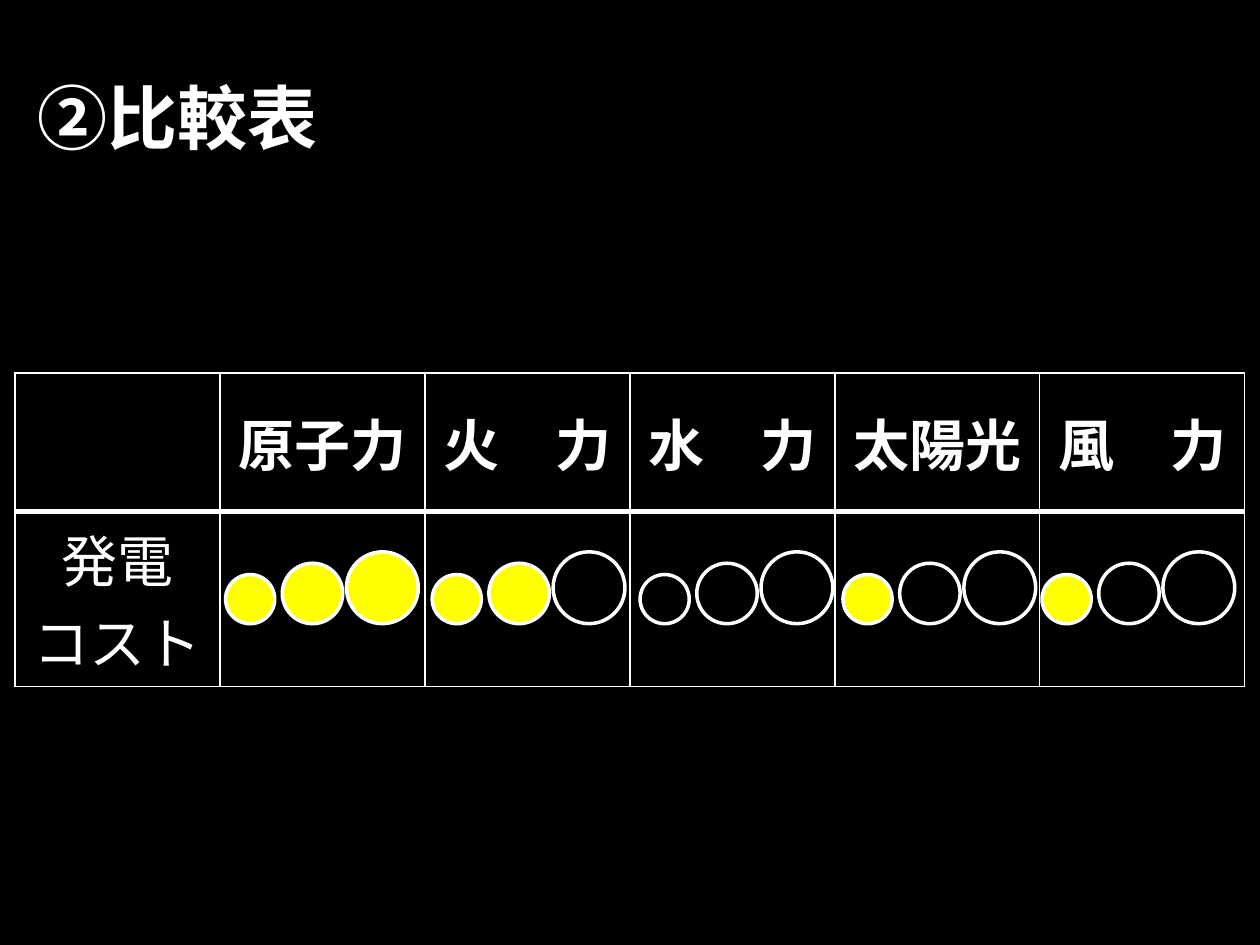
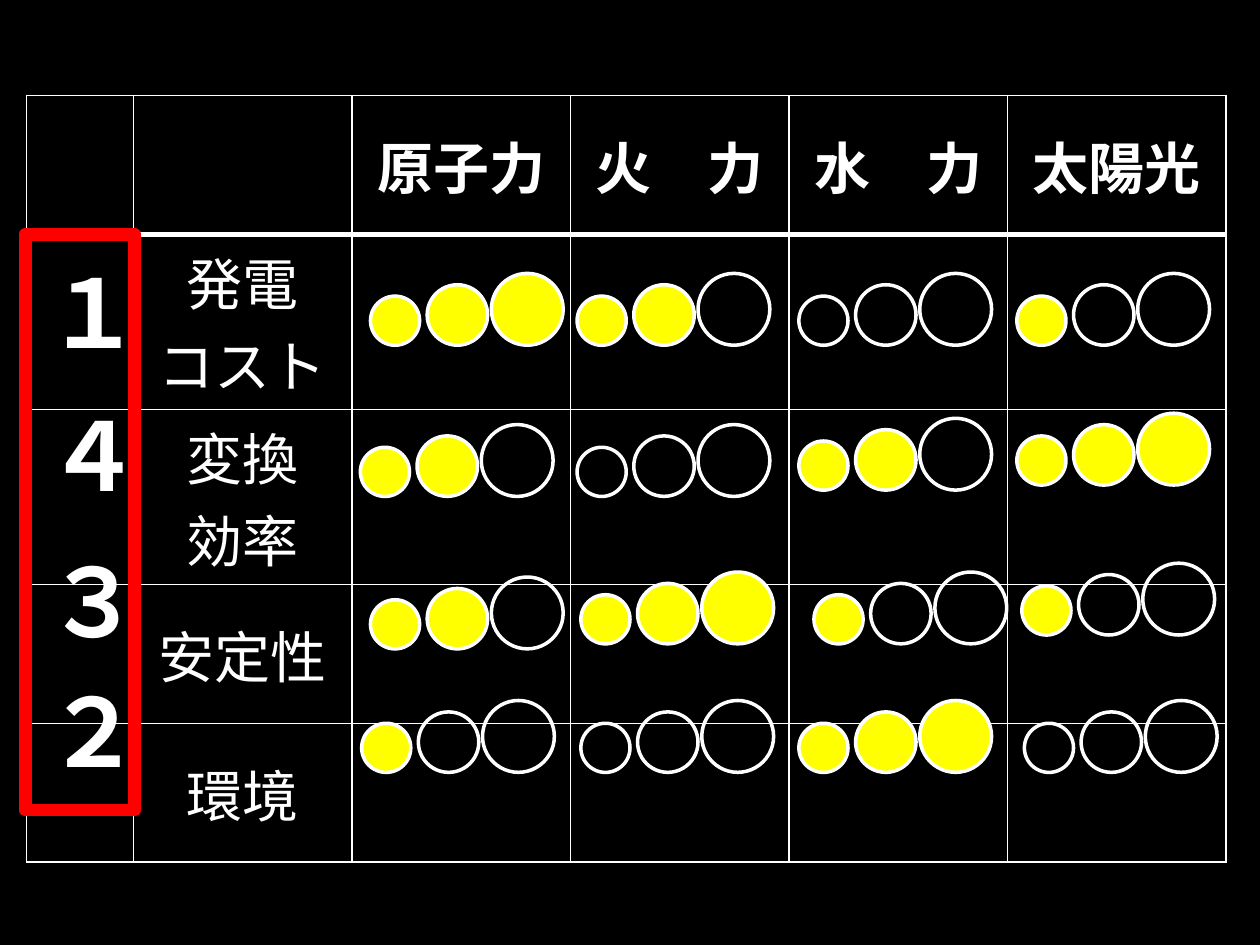
from lxml.etree import SubElement
from pptx import Presentation
from pptx.dml.color import RGBColor
from pptx.enum.shapes import MSO_SHAPE
from pptx.enum.text import MSO_ANCHOR, PP_ALIGN
from pptx.oxml.ns import qn
from pptx.util import Inches, Pt

BLACK, WHITE, YELLOW, RED = "000000", "FFFFFF", "FFFF00", "FF0000"
JAPANESE_FONT = "Noto Sans CJK JP"
DIGIT_FONT = "Calibri"
TITLE_ONLY, BLANK = 5, 6
HEADER_HEIGHT, LINE_HEIGHT = 1.1, 1.39  # one-line and two-line rows
HEADER_RULE, CELL_RULE = 3, 1

# Offset from the group's left and top, then diameter
CIRCLES = [(0, 0.18, 0.39), (0.45, 0.09, 0.48), (0.96, 0, 0.57)]

COST_ROW = ["発電\nコスト"]
SOURCES = ["原子力", "火　力", "水　力", "太陽光", "風　力"]

COST_TOP = 4.38
COST_RATINGS = [(1.79, 3), (3.43, 2), (5.08, 0), (6.69, 1), (8.27, 1)]

# Left, top and number of filled circles, one line for each criterion
RATINGS = [
    [(2.94, 2.17, 3), (4.58, 2.17, 2), (6.34, 2.17, 0), (8.07, 2.17, 1)],
    [(2.86, 3.37, 2), (4.58, 3.37, 0), (6.34, 3.32, 2), (8.07, 3.28, 3)],
    [(2.94, 4.58, 2), (4.61, 4.54, 3), (6.46, 4.54, 1), (8.11, 4.47, 1)],
    [(2.87, 5.56, 1), (4.61, 5.56, 0), (6.34, 5.56, 3), (8.13, 5.56, 0)],
]
PRIORITIES = [("１", 1.97), ("４", 3.1), ("３", 4.26), ("２", 5.29)]


def color(value):
    return RGBColor.from_string(value)


def add_page(deck, layout):
    page = deck.slides.add_slide(deck.slide_layouts[layout])
    page.background.fill.solid()
    page.background.fill.fore_color.rgb = color(BLACK)
    return page


def format_paragraph(para, size, bold, align, name=JAPANESE_FONT):
    para.alignment = align
    font = para.font
    font.size, font.bold, font.name = Pt(size), bold, name
    font.color.rgb = color(WHITE)
    if name == JAPANESE_FONT:
        SubElement(font._element, qn("a:ea"), typeface=name)


def set_title(page, text):
    title = page.shapes.title
    title.left, title.top = Inches(0.2), Inches(0.3)
    title.width, title.height = Inches(9.61), Inches(1.25)
    title.text = text
    title.text_frame.vertical_anchor = MSO_ANCHOR.MIDDLE
    format_paragraph(title.text_frame.paragraphs[0], 40, True, PP_ALIGN.LEFT)


def set_borders(cell, top, bottom):
    """Rule the cell in white; top and bottom are widths in points."""
    widths = {"a:lnL": CELL_RULE, "a:lnR": CELL_RULE, "a:lnT": top, "a:lnB": bottom}
    for tag, width in widths.items():
        line = SubElement(cell._tc.get_or_add_tcPr(), qn(tag), w=str(Pt(width)))
        fill = SubElement(line, qn("a:solidFill"))
        SubElement(fill, qn("a:srgbClr"), val=WHITE)


def add_comparison(page, left, top, widths, heights, rows):
    """Add a ruled table whose first row is a bold header."""
    frame = page.shapes.add_table(len(heights), len(widths), Inches(left), Inches(top),
                                  Inches(sum(widths)), Inches(sum(heights)))
    table = frame.table
    table.horz_banding = False
    for column, width in zip(table.columns, widths):
        column.width = Inches(width)
    for row, height in zip(table.rows, heights):
        row.height = Inches(height)
    for row_number, texts in enumerate(rows):
        for column_number, text in enumerate(texts):
            cell = table.cell(row_number, column_number)
            set_borders(cell,
                        HEADER_RULE if row_number == 1 else CELL_RULE,
                        HEADER_RULE if row_number == 0 else CELL_RULE)
            cell.fill.background()
            if text:
                cell.text = text
                cell.vertical_anchor = MSO_ANCHOR.MIDDLE
                for para in cell.text_frame.paragraphs:
                    format_paragraph(para, 32, row_number == 0, PP_ALIGN.CENTER)


def add_outline(shapes, kind, left, top, width, height, line_color, line_width):
    shape = shapes.add_shape(kind, Inches(left), Inches(top), Inches(width), Inches(height))
    shape.shadow.inherit = False
    shape.fill.background()
    shape.line.color.rgb = color(line_color)
    shape.line.width = Pt(line_width)
    return shape


def add_rating(page, left, top, score):
    """Group three growing circles, the first `score` of them filled."""
    group = page.shapes.add_group_shape()
    for number, (across, down, size) in enumerate(CIRCLES):
        circle = add_outline(group.shapes, MSO_SHAPE.OVAL, left + across, top + down,
                             size, size, WHITE, 2)
        if number < score:
            circle.fill.solid()
            circle.fill.fore_color.rgb = color(YELLOW)


def add_priority(page, digit, top):
    box = page.shapes.add_textbox(Inches(0.27), Inches(top), Inches(0.72), Inches(1.01))
    box.text_frame.word_wrap = False
    box.text_frame.text = digit
    format_paragraph(box.text_frame.paragraphs[0], 54, True, PP_ALIGN.CENTER, DIGIT_FONT)


def build_cost_page(deck):
    page = add_page(deck, TITLE_ONLY)
    set_title(page, "②比較表")
    rows = [[""] + SOURCES, COST_ROW + [""] * len(SOURCES)]
    add_comparison(page, 0.12, 2.96, [9.76 / 6] * 6, [HEADER_HEIGHT, LINE_HEIGHT], rows)
    for left, score in COST_RATINGS:
        add_rating(page, left, COST_TOP, score)


def build_priority_page(deck):
    page = add_page(deck, BLANK)
    criteria = COST_ROW + ["変換\n効率", "安定性", "環境"]
    sources = SOURCES[:4]
    rows = [["", ""] + sources]
    rows += [["", criterion] + [""] * len(sources) for criterion in criteria]
    heights = [HEADER_HEIGHT, LINE_HEIGHT, LINE_HEIGHT, HEADER_HEIGHT, HEADER_HEIGHT]
    add_comparison(page, 0.21, 0.76, [0.85] + [8.67 / 5] * 5, heights, rows)
    for criterion in RATINGS:
        for left, top, score in criterion:
            add_rating(page, left, top, score)
    frame = add_outline(page.shapes, MSO_SHAPE.RECTANGLE, 0.2, 1.86, 0.87, 4.57, RED, 7.25)
    SubElement(frame.line._get_or_add_ln(), qn("a:round"))
    for digit, top in PRIORITIES:
        add_priority(page, digit, top)


def main():
    deck = Presentation()
    deck.slide_width, deck.slide_height = Inches(10), Inches(7.5)
    build_cost_page(deck)
    build_priority_page(deck)
    deck.save("out.pptx")


if __name__ == "__main__":
    main()
